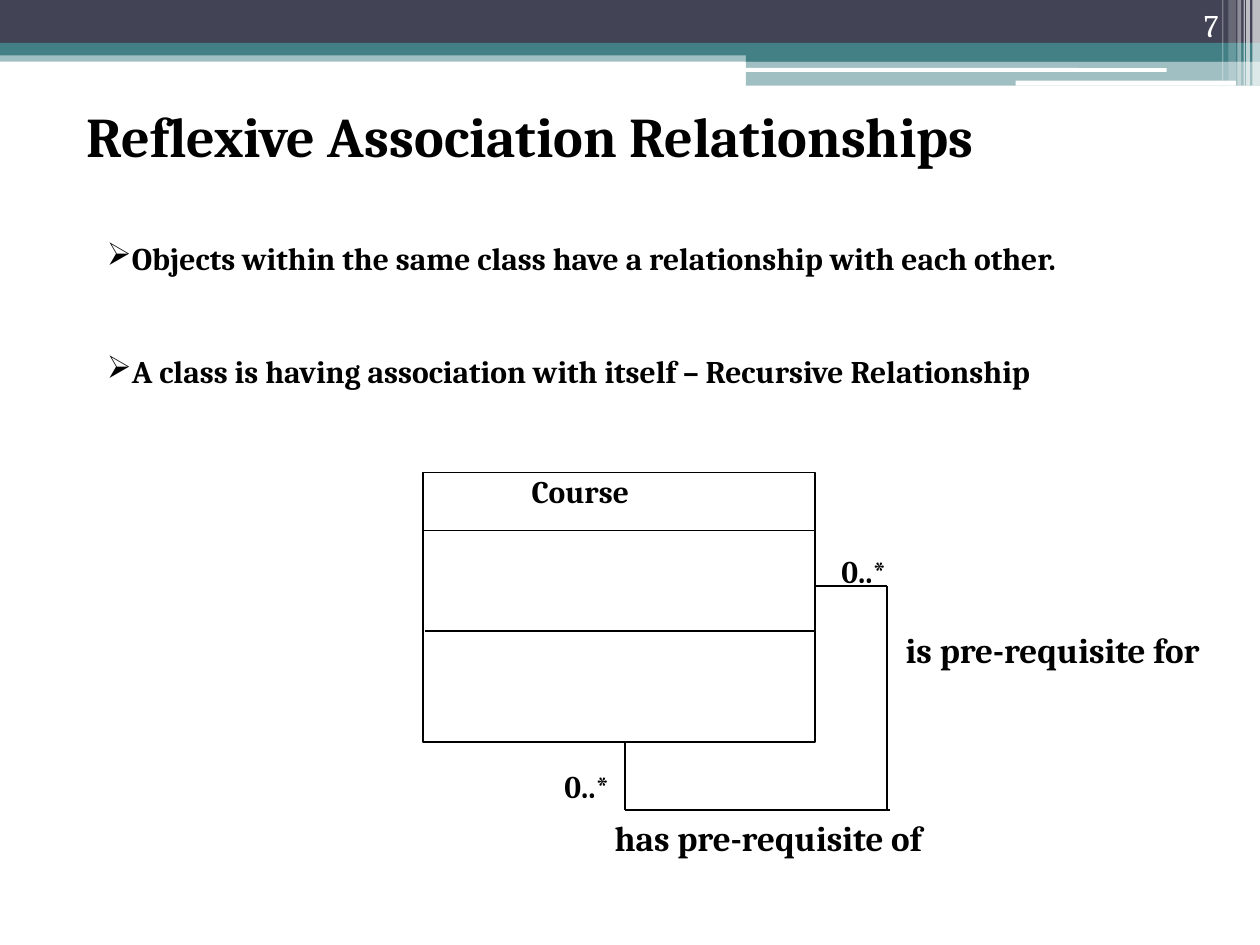
import dataclasses
import typing

import lxml.etree
import pptx
import pptx.dml.color
import pptx.enum.shapes
import pptx.enum.text
import pptx.oxml.ns
import pptx.util

UNIT = 9144  # 100 px to the inch
FONT = "Cambria"
HUES = {"navy": "424456", "teal": "438086", "white": "FFFFFF", "black": "000000"}
KINDS = pptx.enum.shapes.MSO_SHAPE
ALIGN = pptx.enum.text.PP_ALIGN
ANCHOR = pptx.enum.text.MSO_ANCHOR
qn = pptx.oxml.ns.qn


class Box(typing.NamedTuple):
    left: int
    top: int
    wide: int
    high: int


@dataclasses.dataclass
class Band:
    box: Box
    hue: str
    alpha: int = 100
    round: bool = False


@dataclasses.dataclass
class Label:
    box: Box
    lines: list[str]
    size: int = 18
    hue: str = "black"
    bold: bool = True
    wrap: bool = False
    grow: bool = True
    bullet: str = ""
    align: ALIGN = ALIGN.LEFT
    anchor: ANCHOR = ANCHOR.TOP


BANDS = [
    Band(Box(0, 40, 1000, 9), "teal", 50),
    Band(Box(0, 0, 1000, 34), "navy"),
    Band(Box(0, 34, 1000, 10), "teal"),
    Band(Box(592, 39, 408, 10), "teal"),
    Band(Box(592, 48, 408, 20), "teal", 50),
    Band(Box(591, 54, 335, 3), "white", round=True),
    Band(Box(806, 64, 175, 4), "white", round=True),
]
STRIPES = [  # left, width, height, alpha
    (994, 6, 68, 65), (989, 3, 68, 65), (987, 1, 68, 60),
    (982, 3, 68, 40), (975, 6, 64, 20), (970, 1, 64, 30),
]
BANDS += [Band(Box(x, 0, w, h), "white", a) for x, w, h, a in STRIPES]

HEADS = [
    Label(Box(894, 0, 83, 40), ["7"], hue="white", bold=False, wrap=True,
          grow=False, align=ALIGN.RIGHT, anchor=ANCHOR.BOTTOM),
    Label(Box(59, 76, 874, 64), ["Reflexive Association Relationships"], 32, wrap=True),
    Label(Box(75, 170, 866, 192),
          ["Objects within the same class have a relationship with each other.",
           "A class is having association with itself – Recursive Relationship"],
          wrap=True, bullet="➢"),
]
COURSE = Box(336, 375, 311, 214)
RULES = [((336, 421), (646, 421)), ((337, 501), (648, 501))]
LOOP = [((496, 589), (496, 643)), ((496, 643), (706, 643)),
        ((704, 643), (704, 465)), ((704, 465), (646, 465))]
TAGS = [
    Label(Box(412, 370, 135, 50), ["Course"]),
    Label(Box(658, 433, 58, 40), ["0..*"]),
    Label(Box(438, 604, 58, 40), ["0..*"]),
    Label(Box(478, 643, 278, 43), ["has pre-requisite of"], 20),
    Label(Box(709, 494, 264, 43), ["is pre-requisite for"], 20),
]


def emu(*nums: int) -> list[int]:
    return [n * UNIT for n in nums]


def color(name: str) -> pptx.dml.color.RGBColor:
    return pptx.dml.color.RGBColor.from_string(HUES[name])


def draw_band(slide, band: Band) -> None:
    kind = KINDS.ROUNDED_RECTANGLE if band.round else KINDS.RECTANGLE
    shape = slide.shapes.add_shape(kind, *emu(*band.box))
    shape.shadow.inherit = False
    shape.line.fill.background()
    shape.fill.solid()
    shape.fill.fore_color.rgb = color(band.hue)
    if band.alpha < 100:
        tint = shape.fill._xPr.find(".//" + qn("a:srgbClr"))
        lxml.etree.SubElement(tint, qn("a:alpha"), val=str(band.alpha * 1000))


def draw_frame(slide, box: Box) -> None:
    shape = slide.shapes.add_shape(KINDS.RECTANGLE, *emu(*box))
    shape.shadow.inherit = False
    shape.fill.background()
    ink(shape.line)


def draw_line(slide, start: tuple[int, int], end: tuple[int, int]) -> None:
    kind = pptx.enum.shapes.MSO_CONNECTOR.STRAIGHT
    line = slide.shapes.add_connector(kind, *emu(*start, *end))
    lxml.etree.SubElement(line._element.spPr, qn("a:effectLst"))
    ink(line.line)


def ink(line) -> None:
    """Give an outline or connector the thin black stroke."""
    line.color.rgb = color("black")
    line.width = pptx.util.Pt(1)


def draw_label(slide, label: Label) -> None:
    frame = slide.shapes.add_textbox(*emu(*label.box)).text_frame
    frame.word_wrap = label.wrap
    frame.vertical_anchor = label.anchor
    if label.grow:
        frame.auto_size = pptx.enum.text.MSO_AUTO_SIZE.SHAPE_TO_FIT_TEXT
    for i, text in enumerate(label.lines):
        para = frame.add_paragraph() if i else frame.paragraphs[0]
        para.alignment = label.align
        if label.bullet:
            para.line_spacing = 1.5
            para.space_before = pptx.util.Pt(32 if i else 0)
            props = para._p.get_or_add_pPr()
            lxml.etree.SubElement(props, qn("a:buChar"), char=label.bullet)
        run = para.add_run()
        run.text = text
        font = run.font
        font.name = FONT
        font.size = pptx.util.Pt(label.size)
        font.bold = label.bold
        font.color.rgb = color(label.hue)


def main() -> None:
    deck = pptx.Presentation()
    deck.slide_width, deck.slide_height = emu(1000, 750)
    slide = deck.slides.add_slide(deck.slide_layouts[6])
    for band in BANDS:
        draw_band(slide, band)
    for label in HEADS:
        draw_label(slide, label)
    draw_frame(slide, COURSE)
    for start, end in RULES + LOOP:
        draw_line(slide, start, end)
    for label in TAGS:
        draw_label(slide, label)
    deck.save("out.pptx")


if __name__ == "__main__":
    main()
